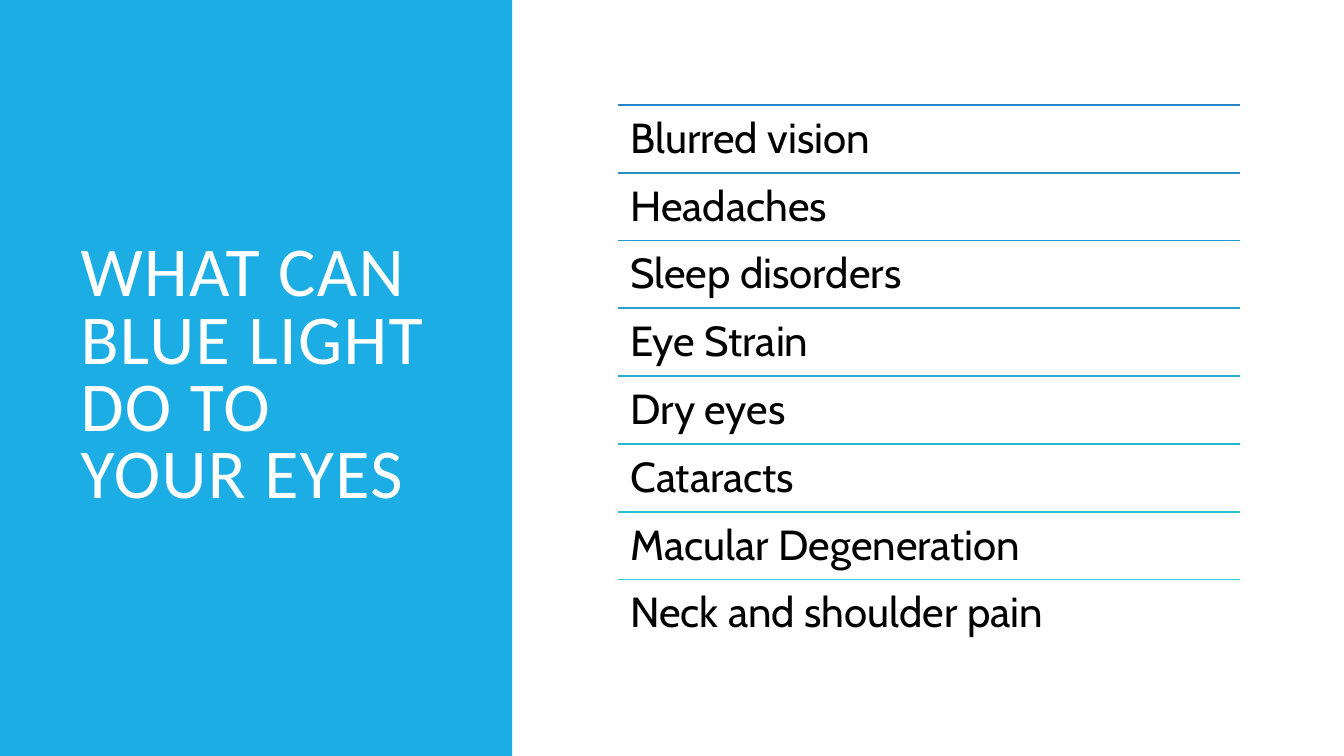
from lxml.etree import SubElement
from pptx import Presentation
from pptx.dml.color import RGBColor
from pptx.enum.shapes import MSO_CONNECTOR, MSO_SHAPE
from pptx.enum.text import MSO_ANCHOR, PP_ALIGN
from pptx.oxml.ns import qn
from pptx.util import Inches, Pt

WHITE = RGBColor(0xFF, 0xFF, 0xFF)
BLACK = RGBColor(0x00, 0x00, 0x00)
SKY_BLUE = RGBColor(0x1C, 0xAD, 0xE4)

# Each effect with the colour of the rule above it, from blue to teal
EFFECTS = [
    ("Blurred vision", RGBColor(0x26, 0x83, 0xC6)),
    ("Headaches", RGBColor(0x26, 0x8D, 0xC8)),
    ("Sleep disorders", RGBColor(0x26, 0x97, 0xCB)),
    ("Eye Strain", RGBColor(0x26, 0xA2, 0xCD)),
    ("Dry eyes", RGBColor(0x27, 0xAC, 0xD0)),
    ("Cataracts", RGBColor(0x27, 0xB7, 0xD2)),
    ("Macular Degeneration", RGBColor(0x27, 0xC3, 0xD5)),
    ("Neck and shoulder pain", RGBColor(0x27, 0xCE, 0xD7)),
]

# Percent of the slide's width (left, width) or height (top, pitch)
LIST_LEFT, LIST_WIDTH = 46, 46.29
LIST_TOP, ROW_PITCH = 13.87, 8.97


def write_text(frame, text, font, size, color, line_spacing=1.0,
               anchor=MSO_ANCHOR.TOP, inset=0.1, tracking=0):
    frame.word_wrap = True
    frame.vertical_anchor = anchor
    frame.margin_left = frame.margin_right = Inches(inset)
    frame.margin_top = frame.margin_bottom = Inches(inset)
    paragraph = frame.paragraphs[0]
    paragraph.alignment = PP_ALIGN.LEFT
    paragraph.line_spacing = line_spacing
    run = paragraph.add_run()
    run.text = text
    run.font.name = font
    run.font.size = Pt(size)
    run.font.color.rgb = color
    if tracking:
        run.font._element.set("spc", str(tracking * 100))


class SlideBuilder:
    """Places elements by percentages of the slide's width and height."""

    title_style = dict(font="Calibri", size=50, color=WHITE, line_spacing=0.8,
                       anchor=MSO_ANCHOR.MIDDLE, tracking=1)
    item_style = dict(font="Cabin", size=30, color=BLACK, line_spacing=0.9,
                      inset=0.12)
    rule_width = Pt(1.25)

    def __init__(self, presentation):
        self.width = presentation.slide_width
        self.height = presentation.slide_height
        self.slide = presentation.slides.add_slide(presentation.slide_layouts[6])

    def box(self, left, top, width, height):
        return (round(self.width * left / 100), round(self.height * top / 100),
                round(self.width * width / 100), round(self.height * height / 100))

    def panel(self, left, top, width, height, color):
        panel = self.slide.shapes.add_shape(
            MSO_SHAPE.RECTANGLE, *self.box(left, top, width, height))
        panel.shadow.inherit = False
        panel.fill.solid()
        panel.fill.fore_color.rgb = color
        panel.line.fill.background()

    def text(self, text, left, top, width, height, **style):
        holder = self.slide.shapes.add_textbox(*self.box(left, top, width, height))
        write_text(holder.text_frame, text, **style)

    def rule(self, left, top, width, color):
        x, y, length, _ = self.box(left, top, width, 0)
        rule = self.slide.shapes.add_connector(
            MSO_CONNECTOR.STRAIGHT, x, y, x + length, y)
        rule.line.color.rgb = color
        rule.line.width = self.rule_width
        SubElement(rule._element.spPr, qn("a:effectLst"))


def main():
    presentation = Presentation()
    presentation.slide_width = Inches(13.33)
    presentation.slide_height = Inches(7.5)
    builder = SlideBuilder(presentation)

    # Title panel
    builder.panel(0, 0, 38.11, 100, SKY_BLUE)
    builder.text("WHAT CAN BLUE LIGHT DO TO YOUR EYES",
                 5.25, 9.33, 28.06, 81.2, **builder.title_style)

    # Ruled list of effects
    for row, (effect, rule_color) in enumerate(EFFECTS):
        top = LIST_TOP + row * ROW_PITCH
        builder.rule(LIST_LEFT, top, LIST_WIDTH, rule_color)
        builder.text(effect, LIST_LEFT, top, LIST_WIDTH, ROW_PITCH,
                     **builder.item_style)

    presentation.save("out.pptx")


if __name__ == "__main__":
    main()
